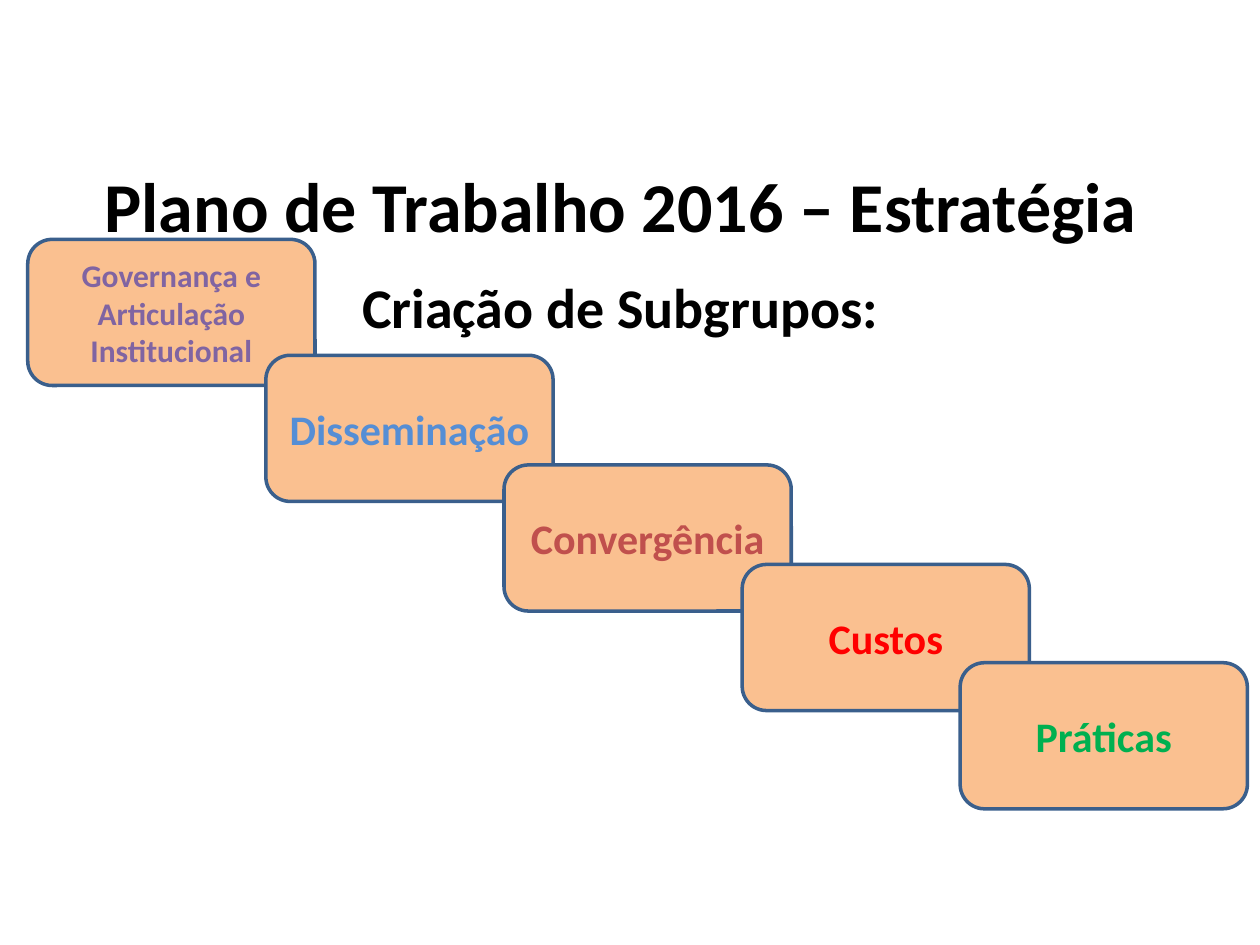
from pptx import Presentation
from pptx.dml.color import RGBColor
from pptx.enum.shapes import MSO_SHAPE as Shape
from pptx.enum.text import MSO_ANCHOR as Anchor, PP_ALIGN as Align
from pptx.util import Inches, Pt

# The slide is a grid of 100 columns and 75 rows.
COLUMNS, ROWS = 100, 75
CELL = Inches(10) // COLUMNS
FONT = "Calibri"
CARD_WIDTH, CARD_HEIGHT = 22.8, 11.6

HEADINGS = [("Plano de Trabalho 2016 – Estratégia", 40), ("Criação de Subgrupos:", 32)]
# column, row, label, size, colour
SUBGROUPS = [
    (2.2, 19, "Governança e Articulação Institucional", 18, "8064A2"),
    (21.1, 28.2, "Disseminação", 24, "558ED5"),
    (40, 36.9, "Convergência", 24, "C0504D"),
    (58.9, 44.8, "Custos", 24, "FF0000"),
    (76.2, 52.6, "Práticas", 24, "00B050"),
]


def colour(value):
    return RGBColor.from_string(value)


def place(column, row, width, height):
    """Turn grid units into slide lengths."""
    return [round(units * CELL) for units in (column, row, width, height)]


def write(para, text, size, hue):
    para.text = text
    para.alignment = Align.CENTER
    for span in para.runs:
        span.font.name = FONT
        span.font.size = Pt(size)
        span.font.bold = True
        span.font.color.rgb = colour(hue)


def add_headings(page):
    box = page.shapes.add_textbox(*place(2, 12.4, 94.5, 52.5))
    frame = box.text_frame
    frame.word_wrap = True
    first, second = frame.paragraphs[0], frame.add_paragraph()
    for para, (text, size) in zip((first, second), HEADINGS):
        write(para, text, size, "000000")
    second.space_before = Pt(15)


def add_card(page, column, row, label, size, hue):
    card = page.shapes.add_shape(
        Shape.ROUNDED_RECTANGLE, *place(column, row, CARD_WIDTH, CARD_HEIGHT))
    card.shadow.inherit = False
    card.fill.solid()
    card.fill.fore_color.rgb = colour("FAC090")
    card.line.color.rgb = colour("3A5F8C")
    card.line.width = Pt(2)
    frame = card.text_frame
    frame.word_wrap = True
    frame.vertical_anchor = Anchor.MIDDLE
    write(frame.paragraphs[0], label, size, hue)


def main():
    deck = Presentation()
    deck.slide_width, deck.slide_height = COLUMNS * CELL, ROWS * CELL
    page = deck.slides.add_slide(deck.slide_layouts[6])
    add_headings(page)
    for subgroup in SUBGROUPS:
        add_card(page, *subgroup)
    deck.save("out.pptx")


if __name__ == "__main__":
    main()
